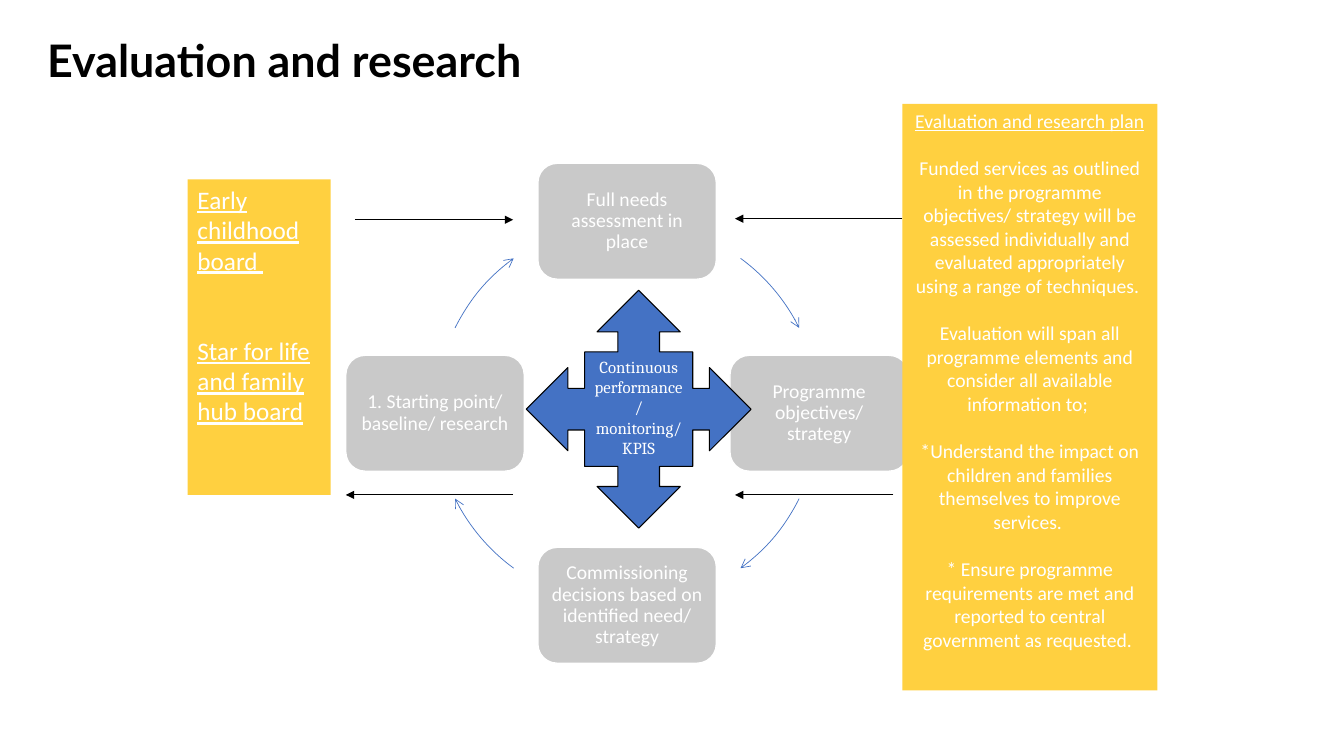
from math import cos, radians, sin

from lxml.etree import SubElement
from pptx import Presentation
from pptx.dml.color import RGBColor
from pptx.enum.shapes import MSO_CONNECTOR, MSO_SHAPE
from pptx.enum.text import MSO_ANCHOR, PP_ALIGN
from pptx.oxml.ns import qn
from pptx.util import Inches, Pt

GREY, YELLOW, BLUE, BLACK, WHITE = "C9C9C9", "FFD040", "4472C4", "000000", "FFFFFF"

TITLE = "Evaluation and research"
CYCLE = [  # clockwise from the top
    "Full needs assessment in place",
    "Programme objectives/ strategy",
    "Commissioning decisions based on identified need/ strategy",
    "1. Starting point/ baseline/ research",
]
CORE = "Continuous performance/ monitoring/ KPIS"
BOARDS = ["Early childhood board ", "Star for life and family hub board"]
PLAN_HEADING = "Evaluation and research plan"
PLAN = [
    "Funded services as outlined in the programme objectives/ strategy will be "
    "assessed individually and evaluated appropriately using a range of techniques. ",
    "Evaluation will span all programme elements and consider all available "
    "information to; ",
    "*Understand the impact on children and families themselves to improve services. ",
    "* Ensure programme requirements are met and reported to central government "
    "as requested. ",
]
FLOWS = [  # start x, end x, y
    (3.52, 5.09, 2.18),
    (5.09, 3.43, 4.91),
    (8.86, 7.29, 4.91),
    (8.95, 7.29, 2.17),
]

CENTRE_X, CENTRE_Y, RADIUS = 6.22, 4.1, 1.905
STEP_W, STEP_H = 1.77, 1.15
ARC_START, ARC_END = 306.2, 333.6  # degrees clockwise from three o'clock

prs = Presentation()
prs.slide_width, prs.slide_height = Inches(13.33), Inches(7.5)
slide = prs.slides.add_slide(prs.slide_layouts[6])


def colour(value):
    return RGBColor.from_string(value)


def style_line(line, value, width, arrow=None):
    line.color.rgb = colour(value)
    line.width = Pt(width)
    if arrow:
        SubElement(line._ln, qn("a:tailEnd"), type=arrow)


def add_box(kind, left, top, width, height, fill=None):
    box = slide.shapes.add_shape(
        kind, Inches(left), Inches(top), Inches(width), Inches(height))
    box.shadow.inherit = False
    if fill:
        box.fill.solid()
        box.fill.fore_color.rgb = colour(fill)
    else:
        box.fill.background()
    box.line.fill.background()
    return box


def write(shape, paragraphs, size, font="Calibri", value=WHITE, bold=False,
          underlined=0, align=PP_ALIGN.CENTER, anchor=MSO_ANCHOR.TOP,
          spacing=1.0, gap=0):
    """Fill a shape with text; the first `underlined` paragraphs are underlined."""
    frame = shape.text_frame
    frame.word_wrap = True
    frame.vertical_anchor = anchor
    for index, words in enumerate(paragraphs):
        paragraph = frame.add_paragraph() if index else frame.paragraphs[0]
        paragraph.alignment = align
        paragraph.line_spacing = spacing
        paragraph.space_before = Pt(gap if index else 0)
        run = paragraph.add_run()
        run.text = words
        run.font.name = font
        run.font.size = Pt(size)
        run.font.bold = bold
        run.font.underline = index < underlined
        run.font.color.rgb = colour(value)


title = slide.shapes.add_textbox(Inches(0.37), Inches(0.27), Inches(8.98), Inches(0.71))
write(title, [TITLE], 32, "Lato", BLACK, bold=True, align=PP_ALIGN.LEFT,
      anchor=MSO_ANCHOR.MIDDLE, spacing=0.9)

for index, words in enumerate(CYCLE):
    angle = radians(90 * index - 90)
    step = add_box(MSO_SHAPE.ROUNDED_RECTANGLE,
                   CENTRE_X + RADIUS * cos(angle) - STEP_W / 2,
                   CENTRE_Y + RADIUS * sin(angle) - STEP_H / 2,
                   STEP_W, STEP_H, GREY)
    style_line(step.line, WHITE, 1)
    frame = step.text_frame
    frame.margin_left = frame.margin_right = Inches(0.06)
    frame.margin_top = frame.margin_bottom = Inches(0.06)
    write(step, [words], 14, anchor=MSO_ANCHOR.MIDDLE, spacing=0.9)

    arc = add_box(MSO_SHAPE.ARC, CENTRE_X - RADIUS, CENTRE_Y - RADIUS,
                  2 * RADIUS, 2 * RADIUS)
    # The lower and left arcs mirror the upper right one about the axes.
    first, last = (ARC_START, ARC_END) if index % 2 == 0 else (360 - ARC_END, 360 - ARC_START)
    turn = 180 if index >= 2 else 0
    # Angles are stored in 60000ths of a degree, adjustments in 100000ths.
    arc.adjustments[0] = (first + turn) % 360 * 0.6
    arc.adjustments[1] = (last + turn) % 360 * 0.6
    style_line(arc.line, BLUE, 0.5, "arrow")

plan = add_box(MSO_SHAPE.RECTANGLE, 8.95, 1.03, 2.53, 5.82, YELLOW)
write(plan, [PLAN_HEADING, *PLAN], 14, underlined=1, gap=17)

boards = add_box(MSO_SHAPE.RECTANGLE, 1.86, 1.78, 1.42, 3.13, YELLOW)
write(boards, BOARDS, 18, underlined=len(BOARDS), align=PP_ALIGN.LEFT, gap=43)

core = add_box(MSO_SHAPE.QUAD_ARROW_CALLOUT, 5.22, 2.88, 2.23, 2.36, BLUE)
style_line(core.line, BLACK, 0.75)
write(core, [CORE], 12, "Cambria")

for start, end, y in FLOWS:
    flow = slide.shapes.add_connector(
        MSO_CONNECTOR.STRAIGHT, Inches(start), Inches(y), Inches(end), Inches(y))
    style_line(flow.line, BLACK, 0.75, "triangle")
    SubElement(flow._element.spPr, qn("a:effectLst"))

prs.save("out.pptx")
